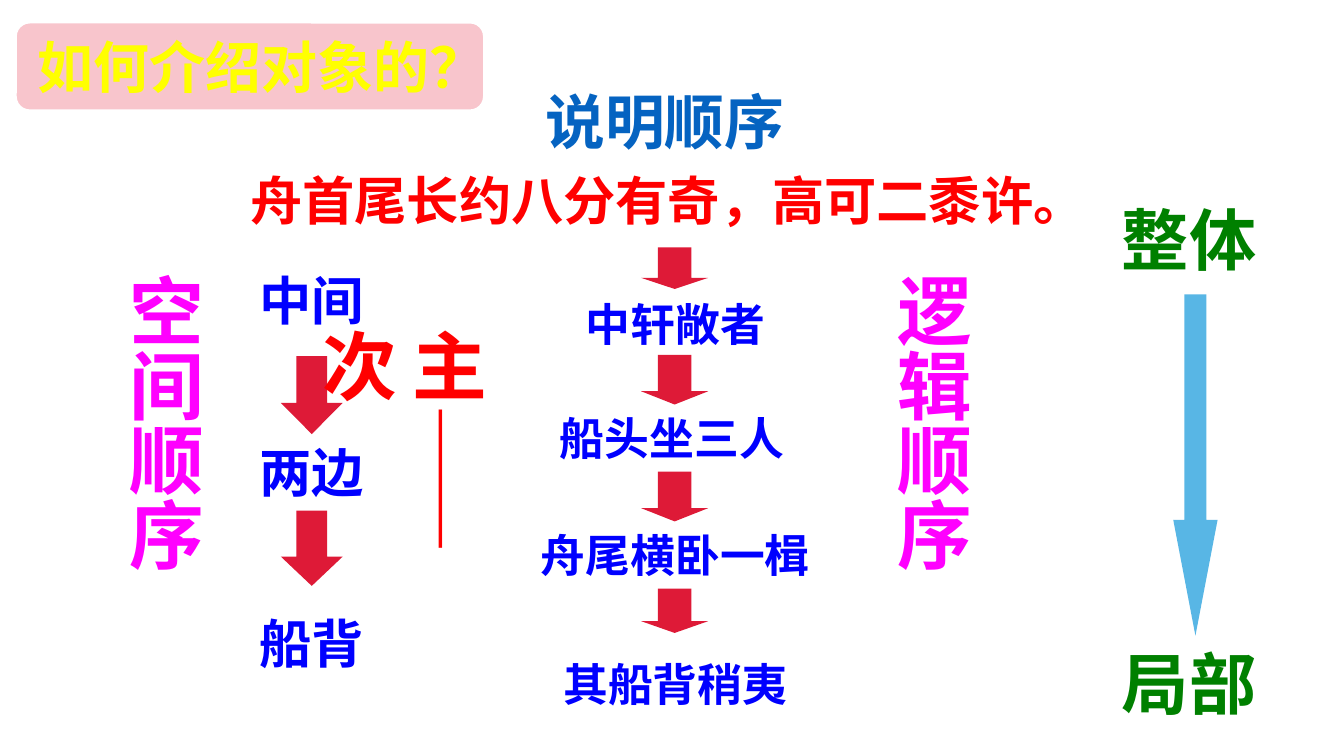
"""Build the slide on the order of description in a text about a carved boat."""
from lxml import etree
from pptx import Presentation, util as u
from pptx.dml.color import RGBColor
from pptx.enum import shapes, text
from pptx.oxml.ns import qn

FONT = "Noto Sans CJK SC"
COLORS = {
    "title": "0563C1", "red": "FF0000", "blue": "0000FF", "green": "008000",
    "magenta": "FF00FF", "yellow": "FFFF00", "arrow": "DE1A37",
    "sky": "58B6E5", "pink": "EC5F74", "white": "FFFFFF",
}
QUESTION = "如何介绍对象的？"
TITLE = "说明顺序"
QUOTE = "舟首尾长约八分有奇，高可二黍许。"
STEPS = [("中轩敞者", 2.16), ("船头坐三人", 3.01), ("舟尾横卧一楫", 3.88), ("其船背稍夷", 4.84)]
STEP_ARROWS = [(1.84, 0.31), (2.64, 0.37), (3.51, 0.37), (4.38, 0.33)]
PARTS = ["中间", "两边", "船背"]
PART_ARROWS = [(2.65, 0.58, 0.505), (3.8, 0.56, 0.473)]
SCOPES = [("整体", 1.43), ("局部", 4.73)]
COLUMNS = [
    ("逻辑顺序", (6.45, 1.94, 0.87, 3.1), "magenta", "c"),
    ("空间顺序", (0.79, 1.94, 0.81, 3.15), "magenta", "c"),
    ("主——次", (2.84, 2.35, 0.87, 2.34), "red", "l"),
]
ALIGN = {"l": text.PP_ALIGN.LEFT, "c": text.PP_ALIGN.CENTER}


def inches(box):
    return [u.Inches(v) for v in box]


def rgb(name):
    return RGBColor.from_string(COLORS[name])


def write(sp, words, size, color, align="c", vertical=False, grow=True):
    tf = sp.text_frame
    tf.word_wrap = True
    tf.vertical_anchor = text.MSO_ANCHOR.TOP if grow else text.MSO_ANCHOR.MIDDLE
    tf.auto_size = text.MSO_AUTO_SIZE.SHAPE_TO_FIT_TEXT if grow else text.MSO_AUTO_SIZE.NONE
    if vertical:
        sp.element.txBody.bodyPr.set("vert", "eaVert")
    p = tf.paragraphs[0]
    p.alignment = ALIGN[align]
    r = p.add_run()
    r.text = words
    r.font.size, r.font.bold, r.font.name = u.Pt(size), True, FONT
    r.font.color.rgb = rgb(color)
    etree.SubElement(r._r.get_or_add_rPr(), qn("a:ea"), typeface=FONT)


def label(s, words, box, **fmt):
    write(s.shapes.add_textbox(*inches(box)), words, **fmt)


def shape(s, kind, box, color, adjustments=()):
    sp = s.shapes.add_shape(kind, *inches(box))
    sp.shadow.inherit = False
    sp.fill.solid()
    sp.fill.fore_color.rgb = rgb(color)
    sp.line.fill.background()
    for i, value in enumerate(adjustments):
        sp.adjustments[i] = value
    return sp


def arrow(s, box, head, color="arrow"):
    shape(s, shapes.MSO_SHAPE.DOWN_ARROW, box, color, (0.5, head))


def question(s):
    sp = shape(s, shapes.MSO_SHAPE.ROUNDED_RECTANGLE, (0.11, 0.16, 3.5, 0.67), "pink")
    fill = sp.element.spPr.find(qn("a:solidFill"))
    etree.SubElement(fill[0], qn("a:alpha"), val="36000")
    sp.line.color.rgb = rgb("white")
    sp.line.width = u.Pt(2.25)
    write(sp, QUESTION, 30, "yellow", align="l")
    sp.text_frame.margin_left = u.Inches(0.14)


def main():
    prs = Presentation()
    prs.slide_width = u.Inches(10)
    prs.slide_height = prs.slide_width * 9 // 16
    s = prs.slides.add_slide(prs.slide_layouts[6])

    label(s, TITLE, (3.96, 0.46, 2.08, 0.87), size=32, color="title", align="l", grow=False)
    label(s, QUOTE, (1.69, 1.2, 6.56, 0.57), size=28, color="red")
    for i, (words, top) in enumerate(STEPS):
        left, width = (3.27, 3.46) if i == 1 else (3.61, 2.83)
        label(s, words, (left, top, width, 0.5), size=24, color="blue")
    for top, height in STEP_ARROWS:
        arrow(s, (4.77, top, 0.5, height), 0.266)

    for words, top in SCOPES:
        label(s, words, (8.25, top, 1.3, 0.71), size=36, color="green", align="l")
    arrow(s, (8.73, 2.19, 0.33, 2.54), 2.611, "sky")

    for i, words in enumerate(PARTS):
        label(s, words, (1.51, 1.95 + i * 1.275, 1.62, 0.57), size=28, color="blue")
    for top, height, head in PART_ARROWS:
        arrow(s, (2.09, top, 0.46, height), head)

    for words, box, color, align in COLUMNS:
        label(s, words, box, size=40, color=color, align=align, vertical=True)
    question(s)
    prs.save("out.pptx")


if __name__ == "__main__":
    main()
